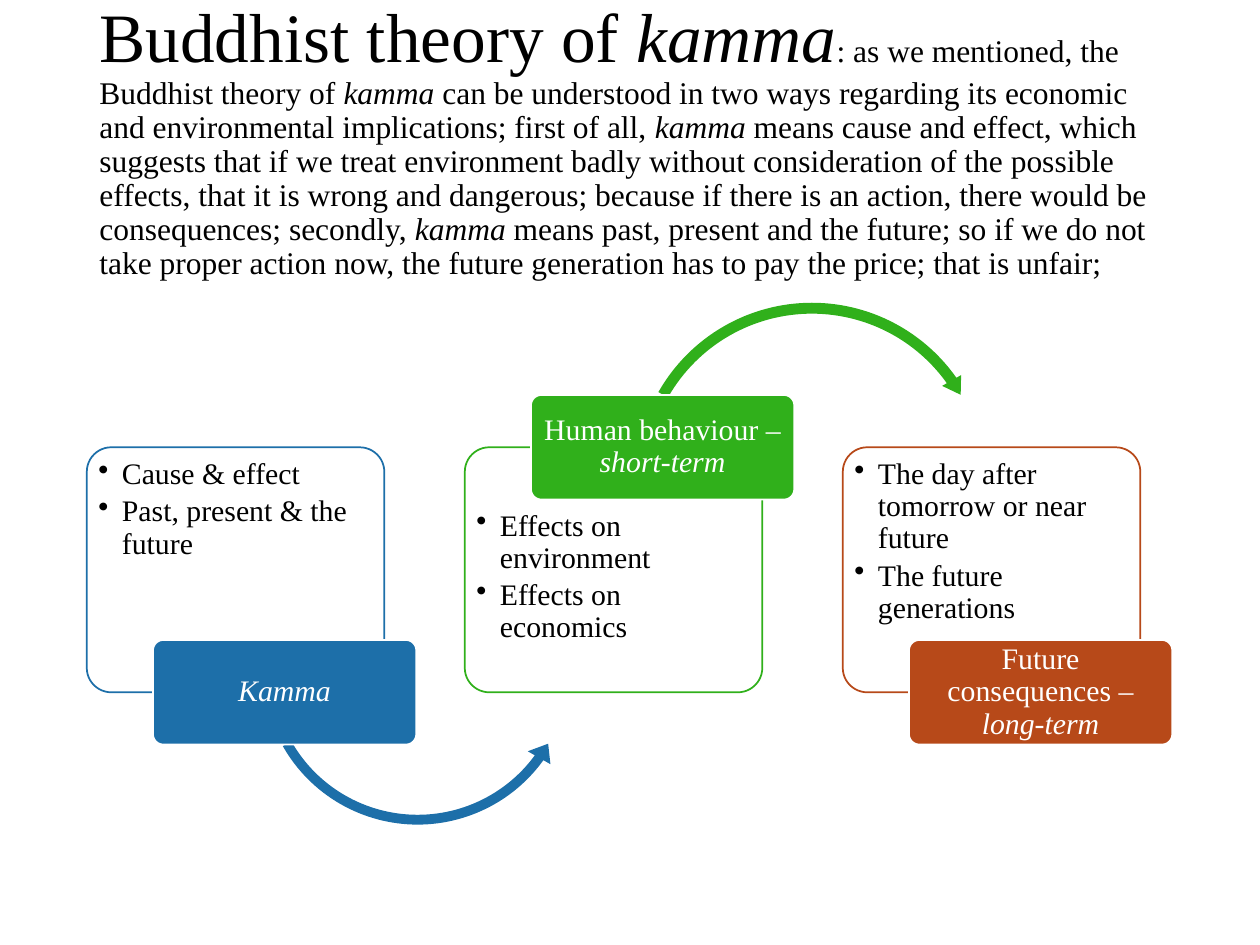
from dataclasses import dataclass
from typing import NamedTuple, Optional

from lxml.etree import SubElement
from pptx import Presentation
from pptx.dml.color import RGBColor
from pptx.enum.shapes import MSO_SHAPE as Preset
from pptx.enum.text import MSO_ANCHOR as Anchor, MSO_AUTO_SIZE as AutoSize, PP_ALIGN as Align
from pptx.oxml.ns import qn
from pptx.util import Pt


@dataclass(frozen=True)
class Theme:
    font: str = "Times New Roman"
    black: str = "000000"
    white: str = "FFFFFF"
    blue: str = "1D6FA9"
    green: str = "30B01B"
    rust: str = "B74919"
    heading_size: float = 39.6
    intro_size: float = 18
    diagram_size: float = 17


class Span(NamedTuple):
    text: str
    italic: bool = False


class Arrow(NamedTuple):
    preset: Preset
    left: float
    top: float
    size: float
    adjustments: tuple


class Step(NamedTuple):
    color: str
    label: tuple
    points: tuple
    label_on_top: bool = False
    arrow: Optional[Arrow] = None


THEME = Theme()
KAMMA = Span("kamma", True)
HEADING = (Span("Buddhist theory of "), KAMMA)
INTRO = (
    Span(": as we mentioned, the Buddhist theory of "),
    KAMMA,
    Span(" can be understood in two ways regarding its economic and environmental "
         "implications; first of all, "),
    KAMMA,
    Span(" means cause and effect, which suggests that if we treat environment badly without "
         "consideration of the possible effects, that it is wrong and dangerous; because if "
         "there is an action, there would be consequences; secondly, "),
    KAMMA,
    Span(" means past, present and the future; so if we do not take proper action now, the "
         "future generation has to pay the price; that is unfair;"),
)
STEPS = (
    Step(THEME.blue, (Span("Kamma", True),),
         ("Cause & effect", "Past, present & the future"),
         arrow=Arrow(Preset.LEFT_CIRCULAR_ARROW, 145.4, 289.4, 186.5,
                     (0.03, 3.83, 21.58, 90.25, 0.04))),
    Step(THEME.green, (Span("Human behaviour – "), Span("short-term", True)),
         ("Effects on environment", "Effects on economics"),
         label_on_top=True,
         arrow=Arrow(Preset.CIRCULAR_ARROW, 360, 169.9, 208,
                     (0.03, 3.4, 194.84, 125.76, 0.03))),
    Step(THEME.rust, (Span("Future consequences – "), Span("long-term", True)),
         ("The day after tomorrow or near future", "The future generations")),
)

PANEL_LEFT, PANEL_TOP, PANEL_WIDTH, PANEL_HEIGHT = 49.6, 255.6, 170, 140
STEP_PITCH = 216
LABEL_OFFSET, LABEL_WIDTH, LABEL_HEIGHT = 37.8, 150.5, 59.8
BULLET_INDENT = 13.5


def add_spans(paragraph, spans: tuple, size: float, color: str) -> None:
    for span in spans:
        run = paragraph.add_run()
        run.text = span.text
        run.font.name = THEME.font
        run.font.size = Pt(size)
        run.font.italic = span.italic
        run.font.color.rgb = RGBColor.from_string(color)


def set_frame(frame, anchor: Anchor, side: float, top: float, bottom: float) -> None:
    frame.word_wrap = True
    frame.auto_size = AutoSize.NONE
    frame.vertical_anchor = anchor
    frame.margin_left = frame.margin_right = Pt(side)
    frame.margin_top, frame.margin_bottom = Pt(top), Pt(bottom)


def set_bullet(paragraph) -> None:
    properties = paragraph._p.get_or_add_pPr()
    properties.set("marL", str(Pt(BULLET_INDENT)))
    properties.set("indent", str(-Pt(BULLET_INDENT)))
    SubElement(properties, qn("a:buChar"), char="•")


def add_filled(slide, preset: Preset, box: tuple, fill: str, line: Optional[str] = None):
    shape = slide.shapes.add_shape(preset, *(Pt(length) for length in box))
    shape.shadow.inherit = False
    shape.fill.solid()
    shape.fill.fore_color.rgb = RGBColor.from_string(fill)
    if line:
        shape.line.color.rgb = RGBColor.from_string(line)
        shape.line.width = Pt(1)
    else:
        shape.line.fill.background()
    return shape


def add_rounded(slide, box: tuple, fill: str, line: str):
    shape = add_filled(slide, Preset.ROUNDED_RECTANGLE, box, fill, line)
    shape.adjustments[0] = 0.1
    return shape


def add_panel(slide, step: Step, left: float) -> None:
    panel = add_rounded(slide, (left, PANEL_TOP, PANEL_WIDTH, PANEL_HEIGHT),
                        THEME.white, step.color)
    color = panel.fill._xPr.find(qn("a:solidFill"))[0]
    SubElement(color, qn("a:alpha"), val="90000")
    frame = panel.text_frame
    set_frame(frame, Anchor.TOP, 2.5, 32 if step.label_on_top else 2.5, 2.5)
    for index, point in enumerate(step.points):
        paragraph = frame.add_paragraph() if index else frame.paragraphs[0]
        paragraph.alignment = Align.LEFT
        paragraph.line_spacing = 0.9
        paragraph.space_after = Pt(3)
        set_bullet(paragraph)
        add_spans(paragraph, (Span(point),), THEME.diagram_size, THEME.black)


def add_arrow(slide, arrow: Arrow, color: str) -> None:
    shape = add_filled(slide, arrow.preset,
                       (arrow.left, arrow.top, arrow.size, arrow.size), color)
    for index, value in enumerate(arrow.adjustments):
        shape.adjustments[index] = value


def add_label(slide, step: Step, left: float) -> None:
    """Centre the label on the top or bottom edge of its panel."""
    edge = PANEL_TOP if step.label_on_top else PANEL_TOP + PANEL_HEIGHT
    label = add_rounded(slide, (left + LABEL_OFFSET, edge - LABEL_HEIGHT / 2,
                                LABEL_WIDTH, LABEL_HEIGHT), step.color, THEME.white)
    set_frame(label.text_frame, Anchor.MIDDLE, 3, 1.5, 1.5)
    paragraph = label.text_frame.paragraphs[0]
    paragraph.alignment = Align.CENTER
    paragraph.line_spacing = 0.9
    add_spans(paragraph, step.label, THEME.diagram_size, THEME.white)


def fill_title(title) -> None:
    title.left, title.top, title.width, title.height = Pt(49.6), Pt(28.8), Pt(620.8), Pt(104.4)
    set_frame(title.text_frame, Anchor.MIDDLE, 7.2, 3.6, 3.6)
    paragraph = title.text_frame.paragraphs[0]
    paragraph.alignment = Align.LEFT
    paragraph.line_spacing = 0.9
    add_spans(paragraph, HEADING, THEME.heading_size, THEME.black)
    add_spans(paragraph, INTRO, THEME.intro_size, THEME.black)


def main() -> None:
    presentation = Presentation()
    presentation.slide_width, presentation.slide_height = Pt(720), Pt(540)
    slide = presentation.slides.add_slide(presentation.slide_layouts.get_by_name("Title Only"))
    fill_title(slide.shapes.title)
    for index, step in enumerate(STEPS):
        left = PANEL_LEFT + index * STEP_PITCH
        add_panel(slide, step, left)
        if step.arrow:
            add_arrow(slide, step.arrow, step.color)
        add_label(slide, step, left)
    presentation.save("out.pptx")


if __name__ == "__main__":
    main()
